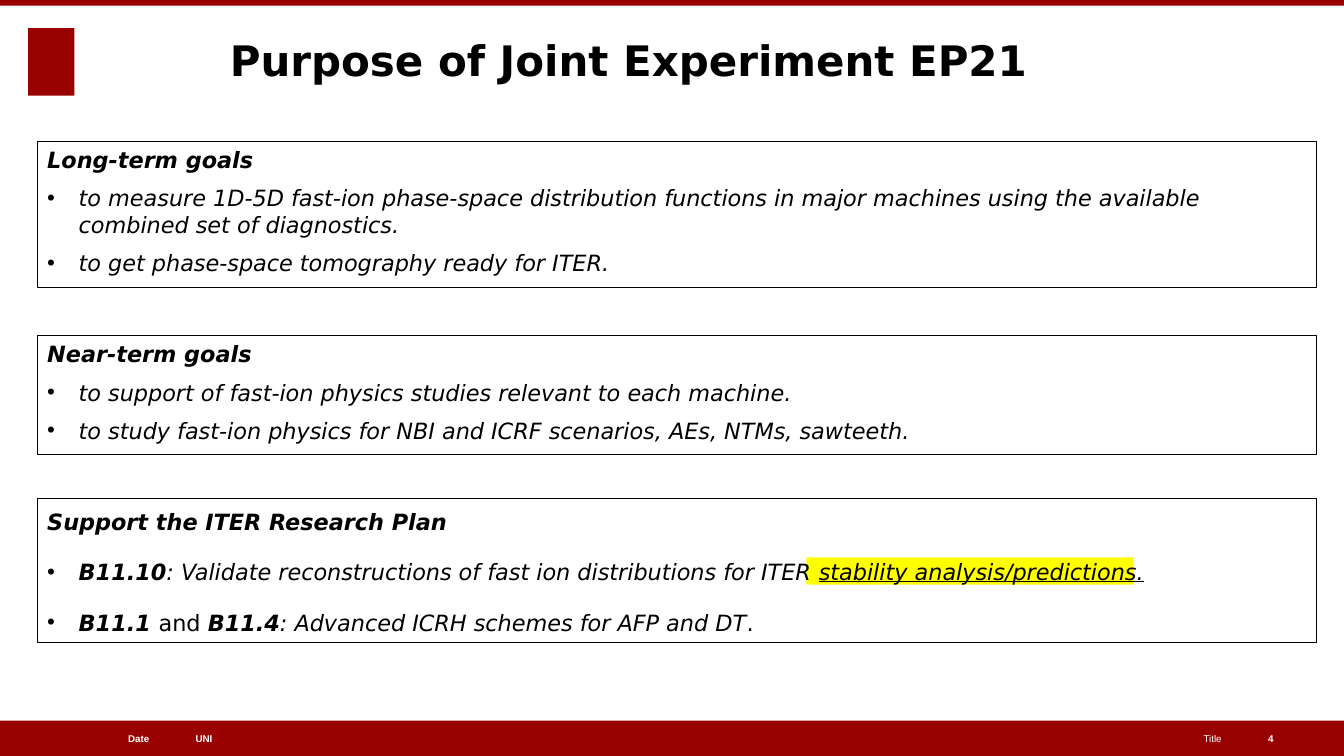
from dataclasses import dataclass

from lxml import etree
from pptx import Presentation
from pptx import util as u
from pptx.dml.color import RGBColor
from pptx.enum import shapes, text
from pptx.oxml import ns

COLORS = {"red": "990000", "white": "FFFFFF", "black": "000000", "yellow": "FFFF00"}
BODY_FONT, FOOTER_FONT = "DejaVu Sans", "Arial"
SLIDE_WIDTH, SLIDE_HEIGHT = 960, 540
FOOTER_TOP, FOOTER_HEIGHT = 514.8, 25.2
BOX_LEFT, BOX_WIDTH = 26.64, 913.68
BULLET_INDENT = 22.5
LEFT, RIGHT, JUSTIFY = text.PP_ALIGN.LEFT, text.PP_ALIGN.RIGHT, text.PP_ALIGN.JUSTIFY


@dataclass(frozen=True)
class Run:
    words: str
    bold: bool = False
    italic: bool = True
    underline: bool = False


@dataclass(frozen=True)
class Block:
    left: float
    top: float
    width: float
    height: float
    color: str


@dataclass(frozen=True)
class FooterItem:
    words: str
    left: float
    width: float
    align: text.PP_ALIGN = LEFT
    bold: bool = True


@dataclass(frozen=True)
class GoalBox:
    top: float
    height: float
    heading: str
    bullets: tuple[tuple[Run, ...], ...]
    align: text.PP_ALIGN = LEFT
    line_spacing: float = 1.0
    space_before: float = 8
    space_after: float = 0


BLOCKS = (
    Block(20.16, 20.16, 33.12, 48.24, "red"),  # emblem
    Block(0, FOOTER_TOP, SLIDE_WIDTH, FOOTER_HEIGHT, "red"),  # footer bar
    Block(0, 0, SLIDE_WIDTH, 4.1, "red"),  # top bar
    Block(576, 398.16, 233.28, 19.44, "yellow"),  # highlight
)

FOOTER_ITEMS = (
    FooterItem("UNI", 139.68, 267.84),
    FooterItem("Date", 19.44, 87.12, RIGHT),
    FooterItem("Title", 439.92, 432.72, RIGHT, bold=False),
    FooterItem("4", 905.76, 33.84),
)

GOAL_BOXES = (
    GoalBox(100.8, 104.4, "Long-term goals", (
        (Run("to measure 1D-5D fast-ion phase-space distribution functions in major "
             "machines using the available combined set of diagnostics."),),
        (Run("to get phase-space tomography ready for ITER."),),
    )),
    GoalBox(239.76, 84.96, "Near-term goals", (
        (Run("to support of fast-ion physics studies relevant to each machine."),),
        (Run("to study fast-ion physics for NBI and ICRF scenarios, AEs, NTMs, sawteeth."),),
    )),
    GoalBox(356.4, 102.24, "Support the ITER Research Plan", (
        (Run("B11.10", bold=True),
         Run(": Validate reconstructions of fast ion distributions for ITER "),
         Run("stability analysis/predictions.", underline=True)),
        (Run("B11.1 ", bold=True), Run("and ", italic=False), Run("B11.4", bold=True),
         Run(": Advanced ICRH schemes for AFP and DT"), Run(".", italic=False)),
    ), JUSTIFY, line_spacing=1.15, space_before=7, space_after=7),
)


def rgb(name: str) -> RGBColor:
    return RGBColor.from_string(COLORS[name])


def add_run(paragraph, run: Run, size: float, font: str = BODY_FONT,
            color: str = "black") -> None:
    part = paragraph.add_run()
    part.text = run.words
    part.font.name, part.font.size = font, u.Pt(size)
    part.font.bold, part.font.italic = run.bold, run.italic
    part.font.underline = run.underline
    part.font.color.rgb = rgb(color)


def add_rectangle(slide, left: float, top: float, width: float, height: float):
    shape = slide.shapes.add_shape(shapes.MSO_SHAPE.RECTANGLE, u.Pt(left), u.Pt(top),
                                   u.Pt(width), u.Pt(height))
    shape.shadow.inherit = False
    return shape


def add_block(slide, block: Block) -> None:
    shape = add_rectangle(slide, block.left, block.top, block.width, block.height)
    shape.fill.solid()
    shape.fill.fore_color.rgb = rgb(block.color)
    shape.line.fill.background()


def add_footer_item(slide, item: FooterItem) -> None:
    shape = slide.shapes.add_textbox(u.Pt(item.left), u.Pt(FOOTER_TOP),
                                     u.Pt(item.width), u.Pt(FOOTER_HEIGHT))
    frame = shape.text_frame
    frame.word_wrap = True
    frame.vertical_anchor = text.MSO_ANCHOR.MIDDLE
    frame.margin_left = frame.margin_right = frame.margin_top = frame.margin_bottom = 0
    paragraph = frame.paragraphs[0]
    paragraph.alignment = item.align
    add_run(paragraph, Run(item.words, item.bold, italic=False), 7, FOOTER_FONT, "white")


def set_bullet(paragraph) -> None:
    properties = paragraph._p.get_or_add_pPr()
    properties.set("marL", str(u.Pt(BULLET_INDENT)))
    properties.set("indent", str(-u.Pt(BULLET_INDENT)))
    etree.SubElement(properties, ns.qn("a:buFont")).set("typeface", FOOTER_FONT)
    etree.SubElement(properties, ns.qn("a:buChar")).set("char", "•")


def add_goal_box(slide, box: GoalBox) -> None:
    shape = add_rectangle(slide, BOX_LEFT, box.top, BOX_WIDTH, box.height)
    shape.fill.background()
    shape.line.color.rgb = rgb("black")
    shape.line.width = u.Pt(0.75)
    frame = shape.text_frame
    frame.word_wrap = True
    frame.auto_size = text.MSO_AUTO_SIZE.SHAPE_TO_FIT_TEXT
    frame.vertical_anchor = text.MSO_ANCHOR.TOP
    rows = ((Run(box.heading, bold=True),), *box.bullets)
    for index, runs in enumerate(rows):
        paragraph = frame.add_paragraph() if index else frame.paragraphs[0]
        paragraph.alignment = box.align
        paragraph.line_spacing = box.line_spacing
        paragraph.space_before = u.Pt(box.space_before)
        paragraph.space_after = u.Pt(box.space_after)
        if index:
            set_bullet(paragraph)
        for run in runs:
            add_run(paragraph, run, 16)


def set_title(slide, words: str) -> None:
    title = slide.shapes.title
    title.left, title.top = u.Pt(156.96), u.Pt(20.88)
    title.width, title.height = u.Pt(612), u.Pt(47.52)
    frame = title.text_frame
    frame.word_wrap = True
    frame.auto_size = text.MSO_AUTO_SIZE.NONE
    frame.vertical_anchor = text.MSO_ANCHOR.TOP
    paragraph = frame.paragraphs[0]
    paragraph.alignment = LEFT
    add_run(paragraph, Run(words, bold=True, italic=False), 30)


def main() -> None:
    presentation = Presentation()
    presentation.slide_width = u.Pt(SLIDE_WIDTH)
    presentation.slide_height = u.Pt(SLIDE_HEIGHT)
    slide = presentation.slides.add_slide(presentation.slide_layouts.get_by_name("Title Only"))

    # Bars, emblem and highlight
    for block in BLOCKS:
        add_block(slide, block)
    # Footer texts
    for item in FOOTER_ITEMS:
        add_footer_item(slide, item)
    # Title and goals
    set_title(slide, "Purpose of Joint Experiment EP21")
    for box in GOAL_BOXES:
        add_goal_box(slide, box)

    presentation.save("out.pptx")


if __name__ == "__main__":
    main()
